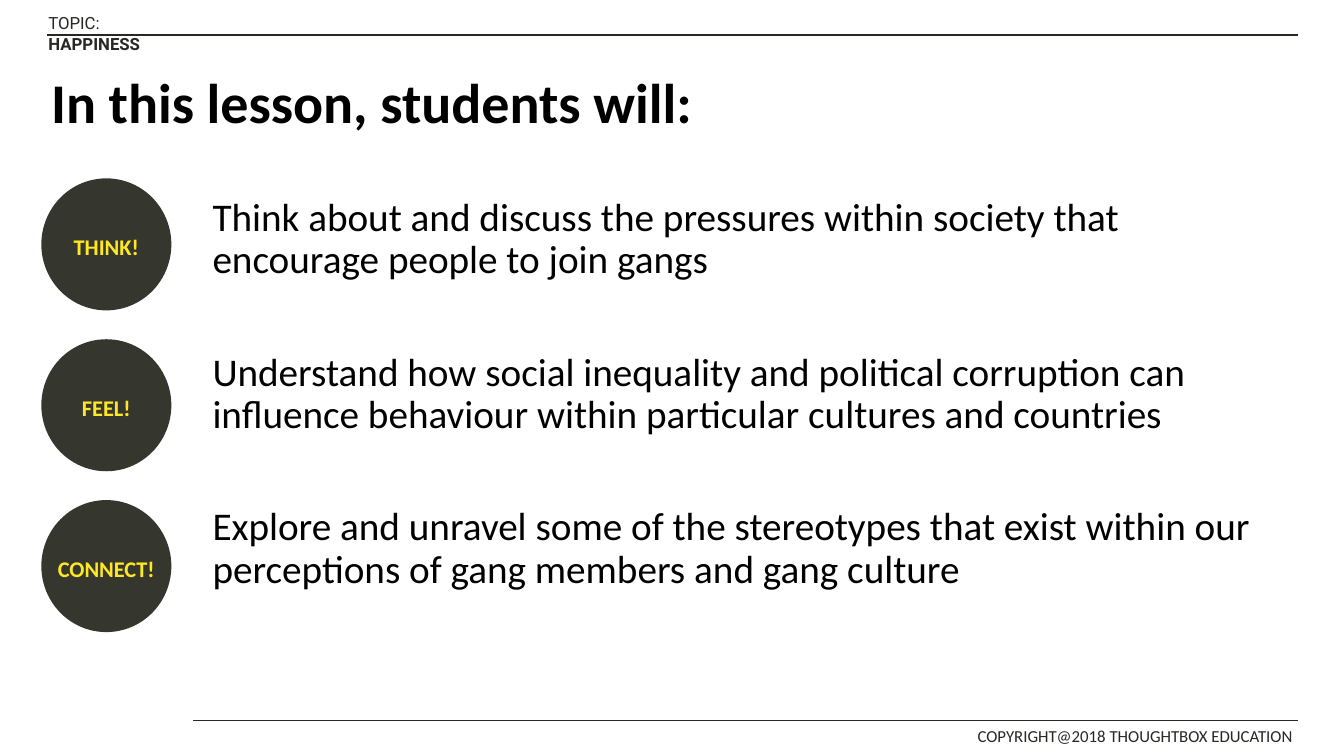
from dataclasses import dataclass

from lxml.etree import SubElement
from pptx import Presentation
from pptx.dml.color import RGBColor
from pptx.enum.shapes import MSO_CONNECTOR, MSO_SHAPE
from pptx.enum.text import MSO_ANCHOR, PP_ALIGN
from pptx.oxml.ns import qn
from pptx.util import Pt


@dataclass(frozen=True)
class Theme:
    ink: RGBColor = RGBColor(0x25, 0x28, 0x23)
    black: RGBColor = RGBColor(0x00, 0x00, 0x00)
    badge: RGBColor = RGBColor(0x35, 0x37, 0x2F)
    yellow: RGBColor = RGBColor(0xFE, 0xE7, 0x25)
    font: str = "Calibri"
    topic_font: str = "Roboto"
    small: int = 12
    label: int = 16
    body: int = 28
    title: int = 40


THEME = Theme()

AIMS = [
    ("THINK!", "Think about and discuss the pressures within society that "
               "encourage people to join gangs"),
    ("FEEL!", "Understand how social inequality and political corruption can "
              "influence behaviour within particular cultures and countries"),
    ("CONNECT!", "Explore and unravel some of the stereotypes that exist within "
                 "our perceptions of gang members and gang culture"),
]
BADGE_TOP, BADGE_STEP = 127.4, 114.9


def add_span(para, text, *, size, color, font=THEME.font, bold=False):
    """Add formatted text to a paragraph."""
    span = para.add_run()
    span.text = text
    span.font.name = font
    span.font.size = Pt(size)
    span.font.bold = bold
    span.font.color.rgb = color


def add_box(page, left, top, width, height, anchor=MSO_ANCHOR.TOP):
    """Add a wrapping text box and return its text frame."""
    box = page.shapes.add_textbox(Pt(left), Pt(top), Pt(width), Pt(height))
    frame = box.text_frame
    frame.word_wrap = True
    frame.vertical_anchor = anchor
    return frame


def add_rule(page, left, right, top):
    """Add a thin horizontal line."""
    rule = page.shapes.add_connector(
        MSO_CONNECTOR.STRAIGHT, Pt(left), Pt(top), Pt(right), Pt(top))
    rule.line.color.rgb = THEME.ink
    rule.line.width = Pt(1)
    SubElement(rule._element.spPr, qn("a:effectLst"))


def add_badge(page, label, top):
    """Add a dark circle with a centred label."""
    badge = page.shapes.add_shape(
        MSO_SHAPE.OVAL, Pt(29.5), Pt(top), Pt(92.9), Pt(94.3))
    badge.shadow.inherit = False
    badge.fill.solid()
    badge.fill.fore_color.rgb = THEME.badge
    badge.line.fill.background()
    frame = badge.text_frame
    frame.word_wrap = False
    frame.vertical_anchor = MSO_ANCHOR.MIDDLE
    para = frame.paragraphs[0]
    para.alignment = PP_ALIGN.CENTER
    para.line_spacing = 1.15
    add_span(para, label, size=THEME.label, color=THEME.yellow, bold=True)


def add_aims(page, aims):
    """Add the aims as spaced paragraphs in one box."""
    frame = add_box(page, 144.7, 137.5, 785.5, 342.7)
    for index, aim in enumerate(aims):
        para = frame.add_paragraph() if index else frame.paragraphs[0]
        para.line_spacing = 0.9
        if index:
            para.space_before = Pt(50)
        add_span(para, aim, size=THEME.body, color=THEME.black)


def main():
    deck = Presentation()
    deck.slide_width, deck.slide_height = Pt(960), Pt(540)
    page = deck.slides.add_slide(deck.slide_layouts[6])

    # Header
    topic = add_box(page, 27.4, 5.8, 109.4, 21.6).paragraphs[0]
    add_span(topic, "TOPIC: ", size=THEME.small, color=THEME.ink,
             font=THEME.topic_font)
    add_span(topic, "HAPPINESS", size=THEME.small, color=THEME.ink,
             font=THEME.topic_font, bold=True)
    add_rule(page, 33.8, 927.4, 25)

    # Footer
    notice = add_box(page, 691.2, 514.8, 244.8, 22.3).paragraphs[0]
    add_span(notice, "COPYRIGHT@2018 THOUGHTBOX EDUCATION",
             size=THEME.small, color=THEME.ink)
    add_rule(page, 138.2, 927.4, 514.8)

    # Title
    title = add_box(page, 29.5, 23, 828, 104.4, MSO_ANCHOR.MIDDLE).paragraphs[0]
    title.line_spacing = 0.9
    add_span(title, "In this lesson, students will:",
             size=THEME.title, color=THEME.black, bold=True)

    # Aims with their badges
    add_aims(page, [aim for _, aim in AIMS])
    for index, (label, _) in enumerate(AIMS):
        add_badge(page, label, BADGE_TOP + index * BADGE_STEP)

    deck.save("out.pptx")


if __name__ == "__main__":
    main()
